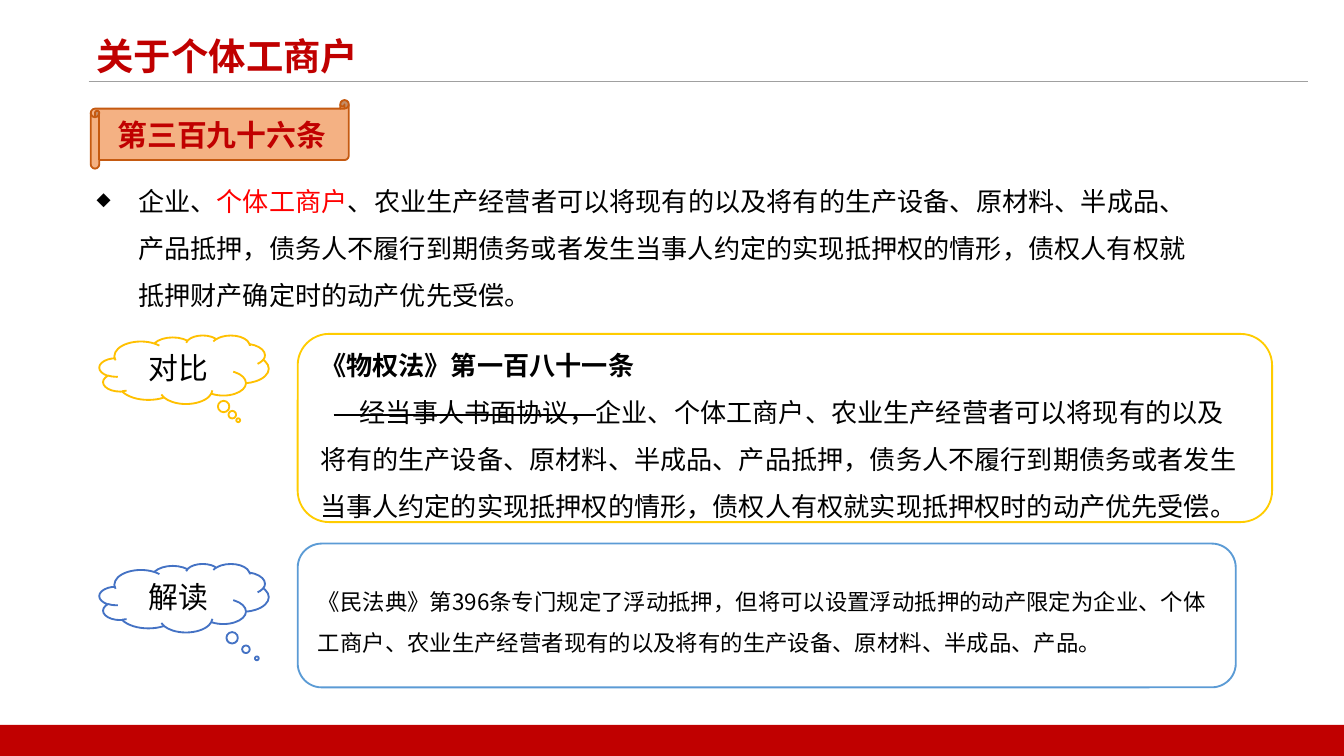
from lxml.etree import SubElement
from pptx import Presentation
from pptx.dml.color import RGBColor
from pptx.enum.shapes import MSO_CONNECTOR, MSO_SHAPE
from pptx.enum.text import MSO_ANCHOR, PP_ALIGN
from pptx.oxml.ns import qn
from pptx.util import Inches, Pt

FONT = "Noto Sans CJK SC"
RED, BLACK, WHITE = "C00000", "000000", "FFFFFF"
GOLD, BLUE = "FFC000", "4472C4"


def color(code):
    return RGBColor.from_string(code)


class Page:
    """Square grid: one unit is a hundredth of the slide's width."""

    def __init__(self, deck):
        self.unit = deck.slide_width / 100
        self.slide = deck.slides.add_slide(deck.slide_layouts[6])
        self.slide.background.fill.solid()
        self.slide.background.fill.fore_color.rgb = color(WHITE)

    def grid(self, *cells):
        return [round(cell * self.unit) for cell in cells]

    def rule(self, x, y, end, ink):
        line = self.slide.shapes.add_connector(
            MSO_CONNECTOR.STRAIGHT, *self.grid(x, y, end, y))
        line.line.color.rgb = color(ink)
        line.line.width = Pt(0.5)
        SubElement(line._element.spPr, qn("a:effectLst"))

    def shape(self, kind, box, fill=None, edge=None, adjust=()):
        item = self.slide.shapes.add_shape(kind, *self.grid(*box))
        item.shadow.inherit = False
        if fill:
            item.fill.solid()
            item.fill.fore_color.rgb = color(fill)
        else:
            item.fill.background()
        if edge:
            item.line.color.rgb = color(edge)
            item.line.width = Pt(1)
        else:
            item.line.fill.background()
        for index, value in enumerate(adjust):
            item.adjustments[index] = value
        frame = item.text_frame
        frame.word_wrap = True
        frame.vertical_anchor = MSO_ANCHOR.MIDDLE
        return frame

    def box(self, box):
        frame = self.slide.shapes.add_textbox(*self.grid(*box)).text_frame
        frame.word_wrap = True
        return frame

    def text(self, para, runs, size, ink=BLACK, bold=False,
             align=PP_ALIGN.LEFT, space=1, bullet=None, left=0, first=0):
        """Runs are strings, or pairs of a string and "strike" or a colour."""
        para.alignment = align
        para.line_spacing = space
        props = para._p.get_or_add_pPr()
        props.set("marL", str(Inches(left)))
        props.set("indent", str(Inches(first)))
        if bullet:
            SubElement(props, qn("a:buSzPct"), val="70000")
            SubElement(props, qn("a:buChar"), char=bullet)
        font = para.font
        font.size, font.bold, font.name = Pt(size), bold, FONT
        same = all(isinstance(run, str) or run[1] == "strike" for run in runs)
        if same:
            font.color.rgb = color(ink)
        SubElement(props.find(qn("a:defRPr")), qn("a:ea"), typeface=FONT)
        for part in runs:
            words, look = (part, None) if isinstance(part, str) else part
            run = para.add_run()
            run.text = words
            if look == "strike":
                run._r.get_or_add_rPr().set("strike", "sngStrike")
            elif not same:
                run.font.color.rgb = color(look or ink)

    def cloud(self, y, words, edge, tail):
        frame = self.shape(MSO_SHAPE.CLOUD_CALLOUT, (7.4, y, 12.6, 5.1),
                           WHITE, edge, tail)
        self.text(frame.paragraphs[0], [words], 16, align=PP_ALIGN.CENTER)

    def panel(self, y, wide, high, edge):
        return self.shape(MSO_SHAPE.ROUNDED_RECTANGLE,
                          (22.15, y, wide, high), edge=edge)


def main():
    deck = Presentation()
    deck.slide_width = Inches(10)
    deck.slide_height = deck.slide_width * 9 // 16
    page = Page(deck)

    page.rule(6.6, 6.05, 97.3, "A0A0A0")
    page.shape(MSO_SHAPE.RECTANGLE, (0, 53.95, 100, 2.3), RED)
    title = page.box((6.2, 2, 23.5, 5.1))
    page.text(title.paragraphs[0], ["关于个体工商户"], 20, RED, True)

    scroll = page.shape(MSO_SHAPE.HORIZONTAL_SCROLL, (6.75, 7.45, 19.2, 5.1),
                        "F4B183", "C55A11")
    page.text(scroll.paragraphs[0], ["第三百九十六条"], 16, RED, True,
              PP_ALIGN.CENTER)

    article = page.box((6.2, 12.15, 84.3, 11.1))
    page.text(article.paragraphs[0], [
        "企业、", ("个体工商户", "FF0000"),
        "、农业生产经营者可以将现有的以及将有的生产设备、原材料、半成品、"
        "产品抵押，债务人不履行到期债务或者发生当事人约定的实现抵押权的情形，"
        "债权人有权就抵押财产确定时的动产优先受偿。",
    ], 14, space=1.5, bullet="◆", left=0.31, first=-0.31)

    page.cloud(24.95, "对比", GOLD, (0.32, 0.74))
    former = page.panel(24.85, 72.5, 14, "FFCC00")
    page.text(former.paragraphs[0], ["《物权法》第一百八十一条"], 14,
              bold=True, space=1.5)
    page.text(former.add_paragraph(), [
        ("　经当事人书面协议，", "strike"),
        "企业、个体工商户、农业生产经营者可以将现有的以及将有的生产设备、"
        "原材料、半成品、产品抵押，债务人不履行到期债务或者发生当事人约定的"
        "实现抵押权的情形，债权人有权就实现抵押权时的动产优先受偿。",
    ], 14, space=1.5, first=0.1)

    page.cloud(41.95, "解读", BLUE, (0.43, 0.88))
    notes = page.panel(40.45, 69.8, 10.7, "5B9BD5")
    page.text(notes.paragraphs[0], [
        "《民法典》第396条专门规定了浮动抵押，但将可以设置浮动抵押的动产限定为"
        "企业、个体工商户、农业生产经营者现有的以及将有的生产设备、原材料、"
        "半成品、产品。",
    ], 12, space=1.5)

    deck.save("out.pptx")


if __name__ == "__main__":
    main()
